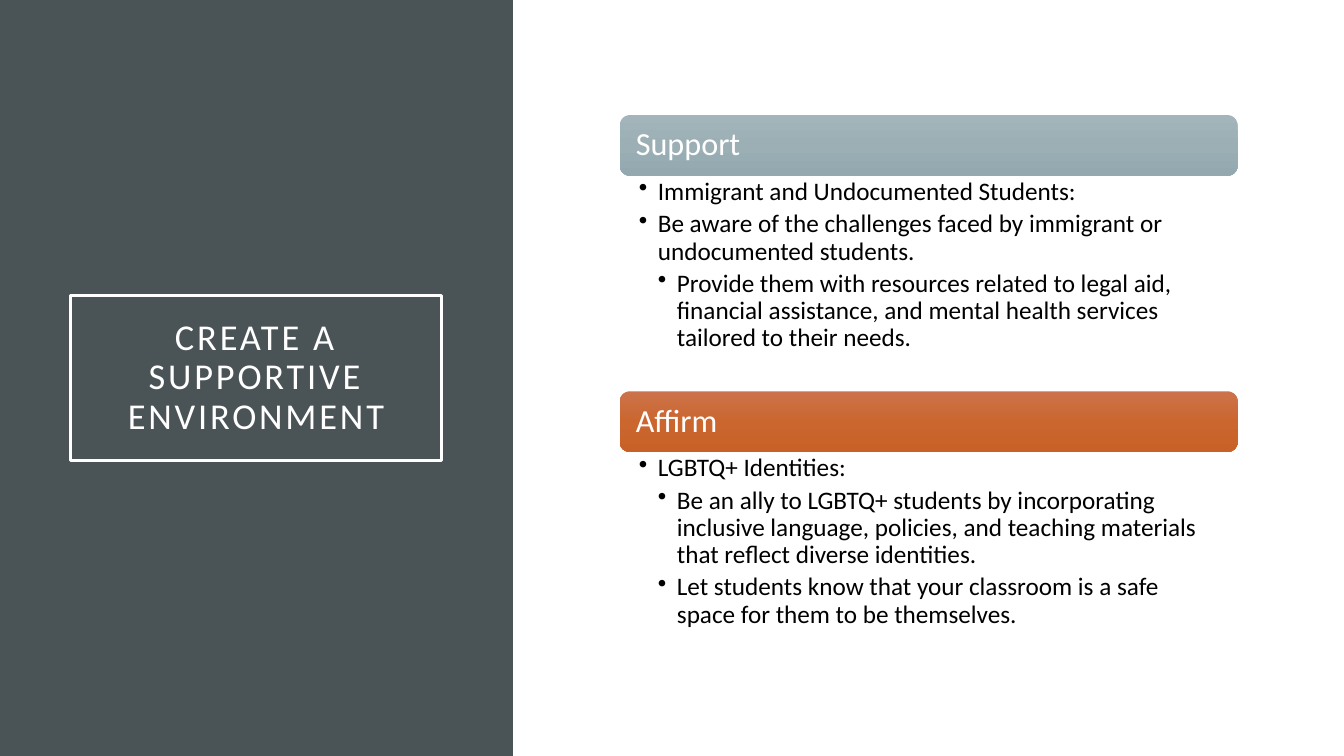
import copy

import pptx
import pptx.dml.color
import pptx.enum.shapes
import pptx.enum.text
import pptx.oxml.ns
import pptx.util
from lxml import etree

Cm = pptx.util.Cm
Pt = pptx.util.Pt
qn = pptx.oxml.ns.qn
SHAPES = pptx.enum.shapes.MSO_SHAPE
ALIGN = pptx.enum.text.PP_ALIGN
MIDDLE = pptx.enum.text.MSO_ANCHOR.MIDDLE

COLOURS = {"panel": "4A5356", "white": "FFFFFF", "black": "000000"}
SECTIONS = [
    ("Support", 2.9, 5.4, ["A3B5BB", "9BAFB5", "93A9AF"], [
        (1, "Immigrant and Undocumented Students:"),
        (1, "Be aware of the challenges faced by immigrant or undocumented students."),
        (2, "Provide them with resources related to legal aid, financial assistance, "
            "and mental health services tailored to their needs."),
    ]),
    ("Affirm", 9.86, 4.75, ["CC734B", "CB662F", "C86128"], [
        (1, "LGBTQ+ Identities:"),
        (2, "Be an ally to LGBTQ+ students by incorporating inclusive language, "
            "policies, and teaching materials that reflect diverse identities."),
        (2, "Let students know that your classroom is a safe space for them "
            "to be themselves."),
    ]),
]
LEFT, WIDTH, HEADER_HEIGHT = Cm(15.62), Cm(15.57), Cm(1.53)
INDENT = Cm(0.48)


def rgb(value):
    return pptx.dml.color.RGBColor.from_string(value)


def style(para, size, colour, align=ALIGN.LEFT):
    para.alignment = align
    para.line_spacing = 0.9
    para.font.name = "Calibri"
    para.font.size = Pt(size)
    para.font.color.rgb = rgb(COLOURS[colour])


deck = pptx.Presentation()
deck.slide_width, deck.slide_height = Cm(33.87), Cm(19.05)
page = deck.slides.add_slide(deck.slide_layouts[5])

# Dark side panel, placed behind the title
panel = page.shapes.add_shape(SHAPES.RECTANGLE, 0, 0, Cm(12.93), deck.slide_height)
panel.shadow.inherit = False
panel.fill.solid()
panel.fill.fore_color.rgb = rgb(COLOURS["panel"])
panel.line.fill.background()
page.shapes.title._element.addprevious(panel._element)

# Framed title
title = page.shapes.title
title.left, title.top, title.width, title.height = Cm(1.78), Cm(7.44), Cm(9.35), Cm(4.17)
title.line.color.rgb = rgb(COLOURS["white"])
title.line.width = Pt(2.5)
frame = title.text_frame
frame.text = "CREATE A SUPPORTIVE ENVIRONMENT"
frame.auto_size = pptx.enum.text.MSO_AUTO_SIZE.NONE
frame.word_wrap = True
frame.vertical_anchor = MIDDLE
frame.margin_left = frame.margin_right = frame.margin_top = frame.margin_bottom = Cm(0.5)
style(frame.paragraphs[0], 26, "white", ALIGN.CENTER)
frame.paragraphs[0].runs[0].font._element.set("spc", "200")

for heading, top, body_height, gradient, bullets in SECTIONS:
    # Header bar with a three-stop vertical gradient
    header = page.shapes.add_shape(SHAPES.ROUNDED_RECTANGLE, LEFT, Cm(top), WIDTH, HEADER_HEIGHT)
    header.shadow.inherit = False
    header.line.fill.background()
    header.fill.gradient()
    header.fill.gradient_angle = 270
    stop_list = header._element.spPr.find(".//" + qn("a:gsLst"))
    stop_list.append(copy.deepcopy(stop_list[0]))
    for index, stop in enumerate(header.fill.gradient_stops):
        stop.position = index / 2
        stop.color.rgb = rgb(gradient[index])
    frame = header.text_frame
    frame.text = heading
    frame.vertical_anchor = MIDDLE
    frame.margin_left = frame.margin_right = Cm(0.33)
    style(frame.paragraphs[0], 23, "white")

    # Bulleted text below the bar
    box = page.shapes.add_textbox(LEFT, Cm(top) + HEADER_HEIGHT, WIDTH, Cm(body_height))
    frame = box.text_frame
    frame.word_wrap = True
    frame.margin_left, frame.margin_right = Cm(0.48), Cm(0.45)
    frame.margin_top = frame.margin_bottom = Cm(0.08)
    for index, (level, words) in enumerate(bullets):
        para = frame.paragraphs[0] if index == 0 else frame.add_paragraph()
        para.text = words
        para.level = level
        style(para, 18, "black")
        para.space_after = Pt(3.6)
        properties = para._element.get_or_add_pPr()
        properties.set("marL", str(level * INDENT))
        properties.set("indent", str(-INDENT))
        bullet = etree.Element(qn("a:buChar"), char="•")
        properties.find(qn("a:defRPr")).addprevious(bullet)

deck.save("out.pptx")
